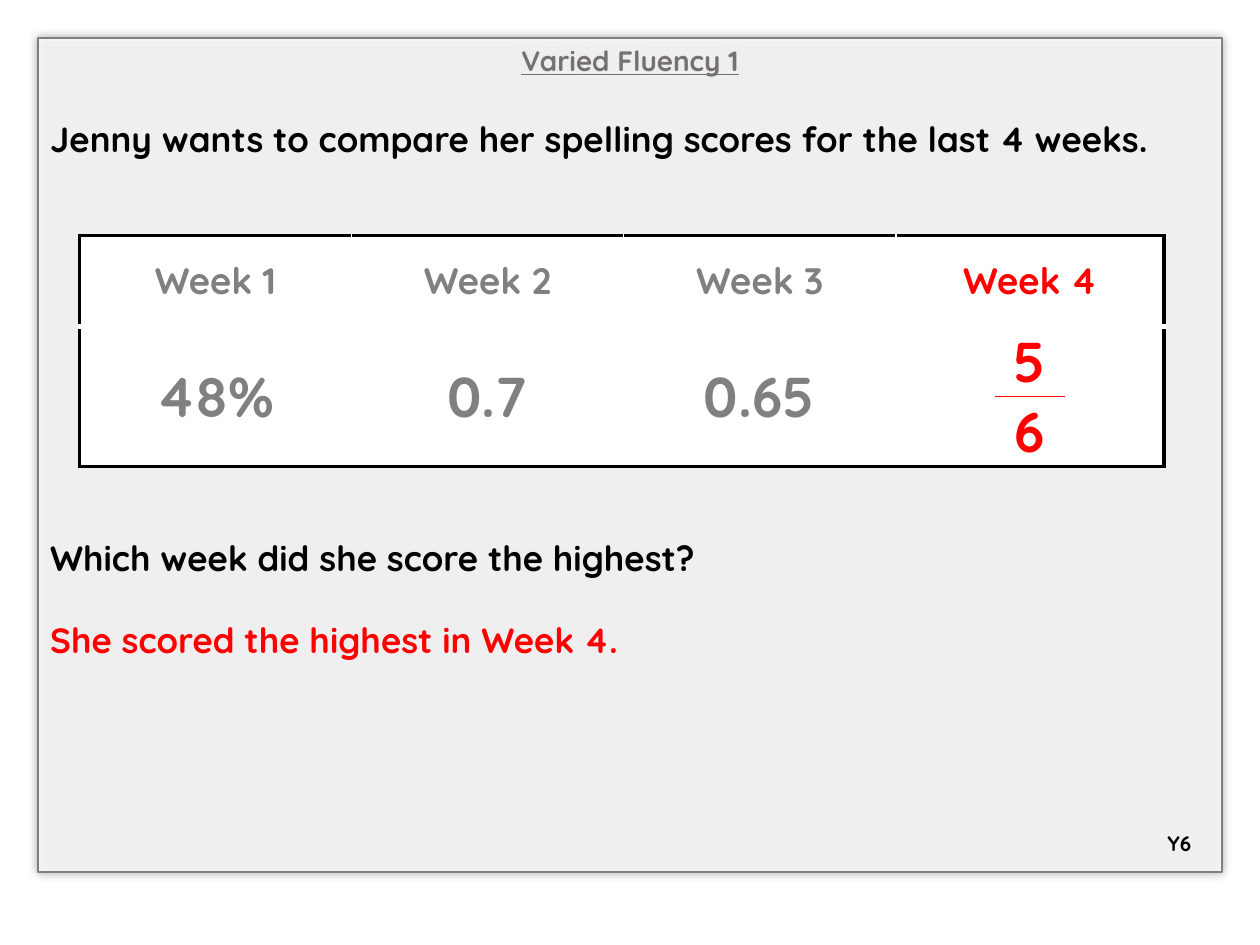
from lxml import etree
from pptx import Presentation
from pptx.dml.color import RGBColor
from pptx.enum.shapes import MSO_SHAPE
from pptx.enum.text import MSO_ANCHOR, PP_ALIGN
from pptx.oxml import parse_xml
from pptx.oxml.ns import nsdecls, qn
from pptx.util import Inches, Pt

LEFT, MID = PP_ALIGN.LEFT, PP_ALIGN.CENTER
TOP, CENTRE = MSO_ANCHOR.TOP, MSO_ANCHOR.MIDDLE
RECT = MSO_SHAPE.RECTANGLE

THEME = {
    "font": "Quicksand",
    "ink": "000000", "grey": "808080", "title": "767171",
    "red": "FF0000", "white": "FFFFFF",
    "small": 12, "head": 16, "body": 20, "week": 21, "score": 32,
}

# Content: text, colour, size, alignment, space before, underline
LINES = [
    ("Varied Fluency 1", "title", "head", MID, 0, True),
    ("Jenny wants to compare her spelling scores for the last 4 weeks.",
     "ink", "body", LEFT, 23, False),
    ("Which week did she score the highest?", "ink", "body", LEFT, 215, False),
    ("She scored the highest in Week 4.", "red", "body", LEFT, 23, False),
]
WEEKS = ["Week 1", "Week 2", "Week 3", "Week 4"]
SCORES = ["48%", "0.7", "0.65"]
TOP_NUM, LOW_NUM = "5", "6"
YEAR = "Y6"

# Table grid: three week columns, then a fraction between two margins
COLS = [2.16] * 3 + [0.79, 0.55, 0.79]
ROWS = [0.72, 0.54, 0.54]
FRAC = 4
EDGE, RULE, THIN, GAP = ("ink", 2.25), ("red", 1), ("white", 1), ("white", 3)


def write(para, text, color="ink", size="body", align=MID, before=0, under=False):
    para.alignment = align
    para.space_before = Pt(before)
    run = para.add_run()
    run.text = text
    font = run.font
    font.name, font.size, font.bold = THEME["font"], Pt(THEME[size]), True
    font.underline = under
    font.color.rgb = RGBColor.from_string(THEME[color])


def add_panel(slide):
    panel = slide.shapes.add_shape(
        RECT, Inches(0.3), Inches(0.3), Inches(9.4), Inches(6.62))
    panel.fill.solid()
    panel.fill.fore_color.rgb = RGBColor.from_string(THEME["white"])
    panel.line.color.rgb = RGBColor.from_string(THEME["grey"])
    panel.line.width = Pt(1)
    panel.shadow.inherit = False
    # See-through fill and soft shadow
    props = panel._element.spPr
    tint = props.find(qn("a:solidFill")).find(qn("a:srgbClr"))
    etree.SubElement(tint, qn("a:alpha"), val="82000")
    props.find(qn("a:effectLst")).append(parse_xml(
        f'<a:outerShdw {nsdecls("a")} blurRad="{Pt(5)}" dist="0" dir="0" '
        'algn="ctr" rotWithShape="0"><a:srgbClr val="000000">'
        '<a:alpha val="40000"/></a:srgbClr></a:outerShdw>'))
    frame = panel.text_frame
    frame.word_wrap = True
    frame.vertical_anchor = TOP
    for i, (text, color, size, align, before, under) in enumerate(LINES):
        para = frame.add_paragraph() if i else frame.paragraphs[0]
        write(para, text, color=color, size=size, align=align,
              before=before, under=under)


def style_cell(cell, row, col):
    low = row + (cell.span_height if cell.is_merge_origin else 1)
    right = col + (cell.span_width if cell.is_merge_origin else 1)
    bar = col == FRAC
    sides = {
        "L": THIN if col else EDGE,
        "R": EDGE if right == len(COLS) else THIN,
        "T": EDGE if row == 0 else RULE if bar and row == 2 else THIN,
        "B": (EDGE if low == len(ROWS) else GAP if row == 0
              else RULE if bar else THIN),
    }
    props = cell._tc.get_or_add_tcPr()
    for side, (color, width) in sides.items():
        props.append(parse_xml(
            f'<a:ln{side} {nsdecls("a")} w="{Pt(width)}"><a:solidFill>'
            f'<a:srgbClr val="{THEME[color]}"/></a:solidFill></a:ln{side}>'))
    cell.fill.solid()
    cell.fill.fore_color.rgb = RGBColor.from_string(THEME["white"])
    cell.vertical_anchor = CENTRE
    cell.margin_left = cell.margin_right = 0
    cell.margin_top = cell.margin_bottom = 0


def add_scores(slide):
    table = slide.shapes.add_table(
        len(ROWS), len(COLS), Inches(0.63), Inches(1.87),
        Inches(sum(COLS)), Inches(sum(ROWS))).table
    table.first_row = table.horz_banding = False
    for part, width in zip(table.columns, COLS):
        part.width = Inches(width)
    for part, height in zip(table.rows, ROWS):
        part.height = Inches(height)
    # Week 4 spans the fraction; every other score spans both lower rows
    table.cell(0, 3).merge(table.cell(0, 5))
    for col in range(len(COLS)):
        if col != FRAC:
            table.cell(1, col).merge(table.cell(2, col))
    for row in range(len(ROWS)):
        for col in range(len(COLS)):
            style_cell(table.cell(row, col), row, col)
    # Words and numbers
    items = [(0, c, text, "week") for c, text in enumerate(WEEKS)]
    items += [(1, c, text, "score") for c, text in enumerate(SCORES)]
    items += [(1, FRAC, TOP_NUM, "score"), (2, FRAC, LOW_NUM, "score")]
    for row, col, text, size in items:
        write(table.cell(row, col).text_frame.paragraphs[0], text,
              color="grey" if col < 3 else "red", size=size)


def add_year(slide):
    frame = slide.shapes.add_textbox(
        Inches(9.11), Inches(6.54), Inches(0.5), Inches(0.3)).text_frame
    frame.word_wrap = True
    frame.vertical_anchor = CENTRE
    write(frame.paragraphs[0], YEAR, size="small")


def main():
    deck = Presentation()
    deck.slide_width, deck.slide_height = Inches(10), Inches(7.5)
    slide = deck.slides.add_slide(deck.slide_layouts[6])
    add_panel(slide)
    add_scores(slide)
    add_year(slide)
    deck.save("out.pptx")


if __name__ == "__main__":
    main()
